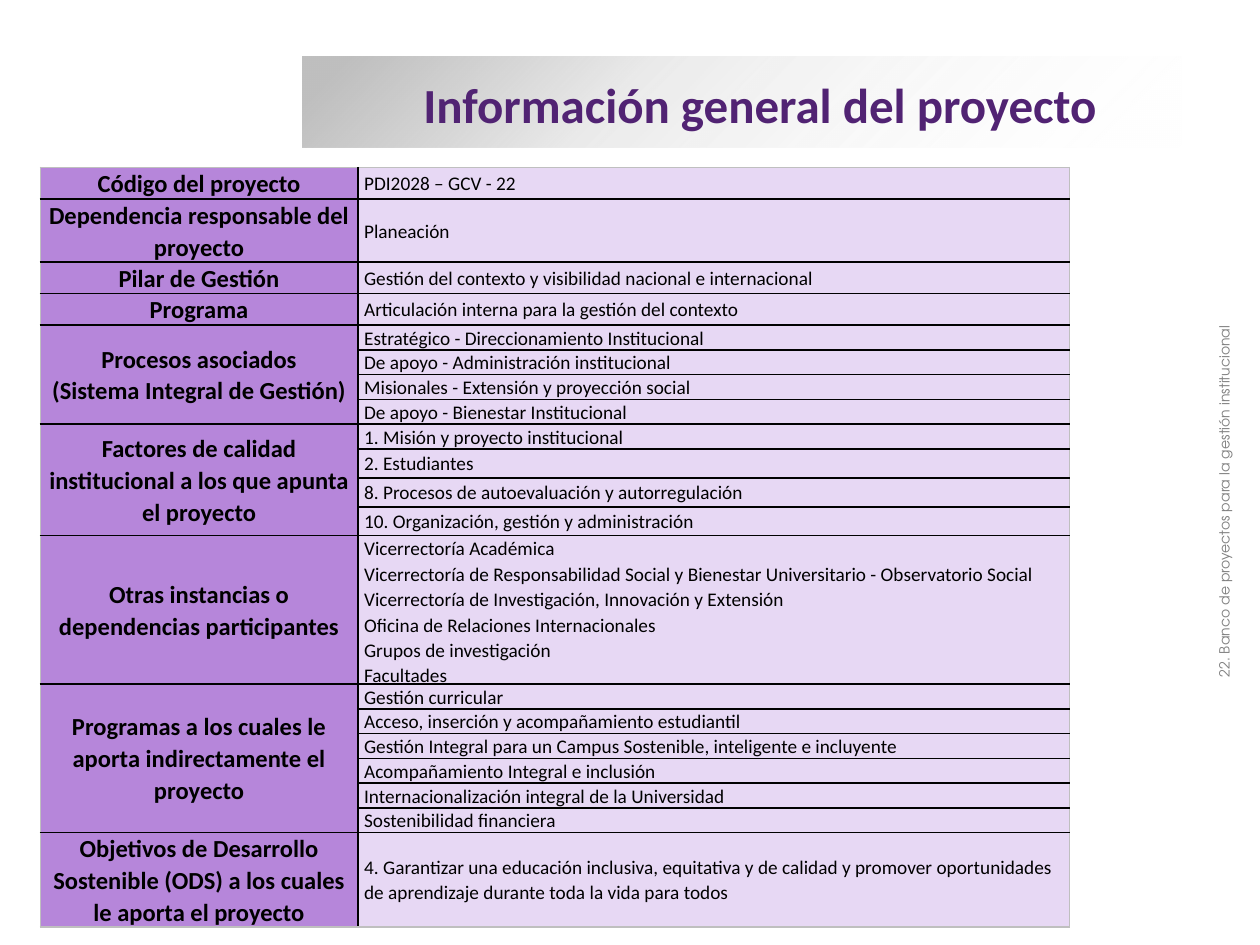
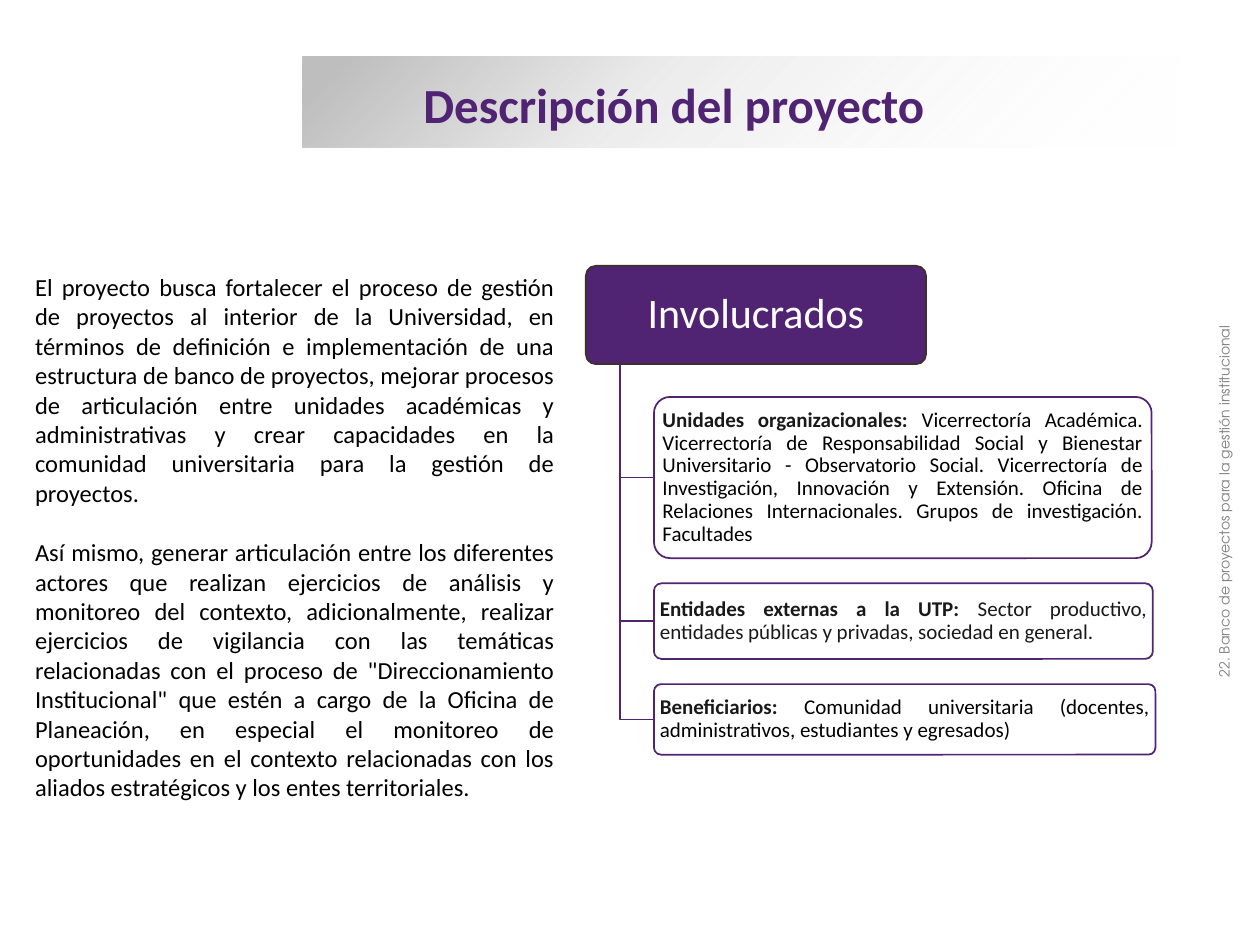
from dataclasses import dataclass
from lxml.etree import SubElement
from pptx import Presentation
from pptx.dml.color import RGBColor
from pptx.enum.shapes import MSO_SHAPE
from pptx.enum.text import MSO_ANCHOR, MSO_AUTO_SIZE, PP_ALIGN
from pptx.oxml import parse_xml
from pptx.oxml.ns import nsdecls, qn
from pptx.util import Inches, Pt


@dataclass(frozen=True)
class Theme:
    font: str = "Calibri"
    side_font: str = "TeX Gyre Adventor"
    purple: str = "512373"
    label: str = "B686DA"
    value: str = "E7D8F4"
    grey: str = "BFBFBF"
    side: str = "808080"
    edge: str = "3F3029"
    ink: str = "191919"
    black: str = "000000"
    white: str = "FFFFFF"
    title: int = 28
    head: int = 24
    body: int = 14
    note: int = 12
    cell: int = 11
    small: int = 8


THEME = Theme()
SIDE = "22. Banco de proyectos para la gestión institucional"

GROUPS = [
    ("Código del proyecto", [("PDI2028 – GCV - 22", 0.25)]),
    ("Dependencia responsable del proyecto", [("Planeación", 0.5)]),
    ("Pilar de Gestión",
     [("Gestión del contexto y visibilidad nacional e internacional", 0.25)]),
    ("Programa", [("Articulación interna para la gestión del contexto", 0.25)]),
    ("Procesos asociados\v(Sistema Integral de Gestión)", [
        ("Estratégico - Direccionamiento Institucional", 0.19),
        ("De apoyo - Administración institucional", 0.19),
        ("Misionales - Extensión y proyección social", 0.19),
        ("De apoyo - Bienestar Institucional", 0.19)]),
    ("Factores de calidad institucional a los que apunta el proyecto", [
        ("1. Misión y proyecto institucional", 0.19),
        ("2. Estudiantes", 0.23),
        ("8. Procesos de autoevaluación y autorregulación", 0.23),
        ("10. Organización, gestión y administración", 0.23)]),
    ("Otras instancias o dependencias participantes", [
        ("Vicerrectoría Académica\n"
         "Vicerrectoría de Responsabilidad Social y Bienestar Universitario"
         " - Observatorio Social\n"
         "Vicerrectoría de Investigación, Innovación y Extensión\n"
         "Oficina de Relaciones Internacionales\n"
         "Grupos de investigación\n"
         "Facultades", 1.17)]),
    ("Programas a los cuales le aporta indirectamente el proyecto", [
        ("Gestión curricular", 0.19),
        ("Acceso, inserción y acompañamiento estudiantil", 0.19),
        ("Gestión Integral para un Campus Sostenible, inteligente e incluyente", 0.19),
        ("Acompañamiento Integral e inclusión", 0.19),
        ("Internacionalización integral de la Universidad", 0.19),
        ("Sostenibilidad financiera", 0.19)]),
    ("Objetivos de Desarrollo Sostenible (ODS) a los cuales le aporta el proyecto", [
        ("4. Garantizar una educación inclusiva, equitativa y de calidad y promover "
         "oportunidades de aprendizaje durante toda la vida para todos", 0.74)]),
]

ABOUT = [
    "El proyecto busca fortalecer el proceso de gestión de proyectos al interior de la "
    "Universidad, en términos de definición e implementación de una estructura de banco "
    "de proyectos, mejorar procesos de articulación entre unidades académicas y "
    "administrativas y crear capacidades en la comunidad universitaria para la gestión "
    "de proyectos.",
    "Así mismo, generar articulación entre los diferentes actores que realizan ejercicios "
    "de análisis y monitoreo del contexto, adicionalmente, realizar ejercicios de "
    "vigilancia con las temáticas relacionadas con el proceso de \"Direccionamiento "
    "Institucional\" que estén a cargo de la Oficina de Planeación, en especial el "
    "monitoreo de oportunidades en el contexto relacionadas con los aliados estratégicos "
    "y los entes territoriales.",
]

ACTORS = [
    ("Unidades organizacionales: ",
     "Vicerrectoría Académica. Vicerrectoría de Responsabilidad Social y Bienestar "
     "Universitario - Observatorio Social. Vicerrectoría de Investigación, Innovación y "
     "Extensión. Oficina de Relaciones Internacionales. Grupos de investigación. "
     "Facultades", THEME.black, 3.95, 1.28),
    ("Entidades externas a la UTP: ",
     "Sector productivo, entidades públicas y privadas, sociedad en general.",
     THEME.ink, 3.96, 0.6),
    ("Beneficiarios: ",
     "Comunidad universitaria (docentes, administrativos, estudiantes y egresados)",
     THEME.black, 3.98, 0.56),
]


def inches(*sizes):
    return [Inches(size) for size in sizes]


def paint(fill, color):
    fill.solid()
    fill.fore_color.rgb = RGBColor.from_string(color)


def style(para, size, color, bold=False, align=PP_ALIGN.LEFT, face=THEME.font):
    para.alignment = align
    font = para.font
    font.name, font.size, font.bold = face, Pt(size), bold
    font.color.rgb = RGBColor.from_string(color)


def inset(frame, side, top):
    frame.margin_left = frame.margin_right = Inches(side)
    frame.margin_top = frame.margin_bottom = Inches(top)


def add_band(slide, box):
    band = slide.shapes.add_shape(MSO_SHAPE.RECTANGLE, *inches(*box))
    band.shadow.inherit = False
    band.line.fill.background()
    stops = "".join(
        f'<a:gs pos="{spot}000"><a:srgbClr val="{color}">'
        f'<a:alpha val="{alpha}000"/></a:srgbClr></a:gs>'
        for spot, color, alpha in [(5, THEME.grey, 100), (37, THEME.grey, 31),
                                   (100, THEME.white, 0)])
    props = band.element.spPr
    props.find(qn("a:prstGeom")).addnext(parse_xml(
        f'<a:gradFill {nsdecls("a")} rotWithShape="1"><a:gsLst>{stops}</a:gsLst>'
        '<a:lin ang="2700000" scaled="0"/></a:gradFill>'))
    return band


def add_title(slide, text, box):
    title = slide.shapes.title
    title.left, title.top, title.width, title.height = inches(*box)
    frame = title.text_frame
    frame.text = text
    frame.word_wrap = True
    frame.auto_size = MSO_AUTO_SIZE.NONE
    frame.vertical_anchor = MSO_ANCHOR.MIDDLE
    style(frame.paragraphs[0], THEME.title, THEME.purple, True)
    title.element.addprevious(add_band(slide, (2.4, 0.45, 6.98, 0.72)).element)


def add_side(slide, box):
    side = slide.shapes.add_textbox(*inches(*box))
    side.rotation = 270
    frame = side.text_frame
    frame.word_wrap = True
    frame.text = SIDE
    style(frame.paragraphs[0], THEME.small, THEME.side,
          align=PP_ALIGN.CENTER, face=THEME.side_font)


def start_slide(deck, text):
    slide = deck.slides.add_slide(deck.slide_layouts[5])
    add_title(slide, text, (3.26, 0.54, 6.2, 0.57))
    add_side(slide, (7.3, 3.86, 4.84, 0.24))
    return slide


def rule_cell(cell, edges):
    props = cell._tc.get_or_add_tcPr()
    for spot, (tag, outer) in enumerate(edges.items()):
        line = SubElement(props, qn(f"a:{tag}"), w=str(Pt(1)))
        props.insert(spot, line)
        fill = SubElement(line, qn("a:solidFill"))
        SubElement(fill, qn("a:srgbClr"), val=THEME.grey if outer else THEME.black)


def fill_cell(cell, text, is_label):
    cell.text = text
    cell.vertical_anchor = MSO_ANCHOR.MIDDLE
    inset(cell, 0.04 if is_label else 0.05, 0)
    for para in cell.text_frame.paragraphs:
        para.line_spacing = 1.07
        if is_label:
            style(para, THEME.body, THEME.black, True, PP_ALIGN.CENTER)
        else:
            style(para, THEME.cell, THEME.black)


def add_facts(slide, left, top, widths):
    count = sum(len(values) for _, values in GROUPS)
    height = sum(size for _, values in GROUPS for _, size in values)
    table = slide.shapes.add_table(
        count, 2, *inches(left, top, sum(widths), height)).table
    table.first_row = table.horz_banding = False
    for col, width in zip(table.columns, widths):
        col.width = Inches(width)
    row = 0
    for label, values in GROUPS:
        first = row
        for text, size in values:
            table.rows[row].height = Inches(size)
            fill_cell(table.cell(row, 1), text, False)
            row += 1
        if len(values) > 1:
            table.cell(first, 0).merge(table.cell(row - 1, 0))
        fill_cell(table.cell(first, 0), label, True)
    for row in range(count):
        for col, color in enumerate((THEME.label, THEME.value)):
            cell = table.cell(row, col)
            paint(cell.fill, color)
            rule_cell(cell, {"lnL": col == 0, "lnR": col == 1,
                             "lnT": row == 0, "lnB": row == count - 1})


def add_about(slide, box):
    frame = slide.shapes.add_textbox(*inches(*box)).text_frame
    frame.word_wrap = True
    frame.text = "\n".join(ABOUT)
    for para in frame.paragraphs:
        style(para, THEME.body, THEME.black, align=PP_ALIGN.JUSTIFY)
    frame.paragraphs[1].space_before = Pt(17)


def add_card(slide, box, fill, edge, pad):
    card = slide.shapes.add_shape(MSO_SHAPE.ROUNDED_RECTANGLE, *inches(*box))
    card.shadow.inherit = False
    card.adjustments[0] = 0.1
    paint(card.fill, fill)
    paint(card.line.fill, edge)
    card.line.width = Pt(1)
    frame = card.text_frame
    frame.word_wrap = True
    frame.vertical_anchor = MSO_ANCHOR.MIDDLE
    inset(frame, *pad)
    para = frame.paragraphs[0]
    para.line_spacing = 0.9
    return para


def add_branch(slide, left, top, right, end):
    path = slide.shapes.build_freeform(*inches(left, top))
    path.add_line_segments([inches(left, end), inches(right, end)], close=False)
    branch = path.convert_to_shape()
    branch.shadow.inherit = False
    branch.fill.background()
    paint(branch.line.fill, THEME.purple)
    branch.line.width = Pt(1)


def add_tree(slide, left, top):
    width, height, gap = 2.7, 0.78, 0.2
    head = add_card(slide, (left, top, width, height),
                    THEME.purple, THEME.edge, (0.05, 0.03))
    head.text = "Involucrados"
    style(head, THEME.head, THEME.white, align=PP_ALIGN.CENTER)
    trunk, inner = left + width / 10, left + width / 5
    base = top + height
    spot = base + 0.26
    for name, text, color, wide, tall in ACTORS:
        add_branch(slide, trunk, base, inner, spot + tall / 2)
        para = add_card(slide, (inner, spot, wide, tall),
                        THEME.white, THEME.purple, (0.03, 0.02))
        style(para, THEME.note, color, align=PP_ALIGN.JUSTIFY)
        lead = para.add_run()
        lead.text = name
        lead.font.bold = True
        lead.font.color.rgb = RGBColor.from_string(THEME.ink)
        para.add_run().text = text
        spot += tall + gap


def main():
    deck = Presentation()
    deck.slide_width, deck.slide_height = inches(10, 7.5)
    facts = start_slide(deck, "Información general del proyecto")
    add_facts(facts, 0.32, 1.33, (2.52, 5.65))
    about = start_slide(deck, "Descripción del proyecto")
    add_about(about, (0.18, 2.11, 4.32, 4.34))
    add_tree(about, 4.65, 2.11)
    deck.save("out.pptx")


if __name__ == "__main__":
    main()
